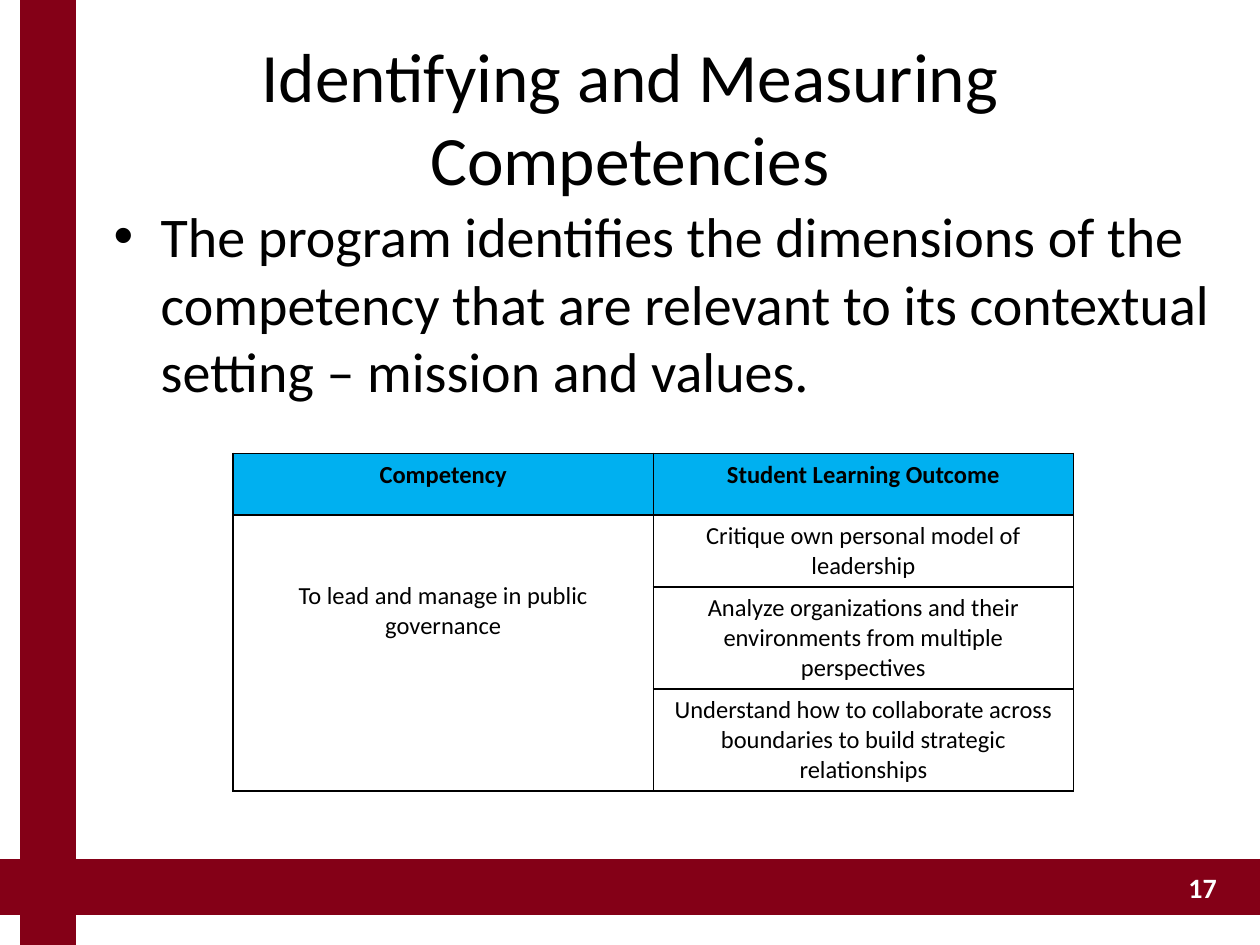
from dataclasses import dataclass

from lxml.etree import SubElement
from pptx import Presentation
from pptx.dml.color import RGBColor
from pptx.enum.shapes import MSO_SHAPE
from pptx.enum.text import MSO_ANCHOR, PP_ALIGN
from pptx.oxml.ns import qn
from pptx.util import Cm, Pt

COLORS = {"band": "840017", "head": "00B0F0", "ink": "000000", "page": "FFFFFF"}
FONT = "Calibri"
INSET = Cm(0.13)


@dataclass
class Box:
    left: float
    top: float
    width: float
    height: float

    def area(self) -> tuple:
        return Cm(self.left), Cm(self.top), Cm(self.width), Cm(self.height)


@dataclass
class Label:
    text: str
    box: Box
    size: float
    align: PP_ALIGN
    anchor: MSO_ANCHOR = MSO_ANCHOR.MIDDLE
    color: str = "ink"
    bold: bool = False
    wrap: bool = True
    bullet: bool = False


@dataclass
class Entry:
    row: int
    col: int
    text: str
    top: float = 0.13


def rgb(name: str) -> RGBColor:
    return RGBColor.from_string(COLORS[name])


def style(par, size: float, align: PP_ALIGN, color: str, bold: bool) -> None:
    par.alignment = align
    for run in par.runs:
        font = run.font
        font.name, font.size, font.bold = FONT, Pt(size), bold
        font.color.rgb = rgb(color)


def draw_band(slide, box: Box) -> None:
    band = slide.shapes.add_shape(MSO_SHAPE.RECTANGLE, *box.area())
    band.shadow.inherit = False
    band.fill.solid()
    band.fill.fore_color.rgb = rgb("band")
    band.line.color.rgb = rgb("band")
    band.line.width = Pt(2)


def draw_label(slide, label: Label) -> None:
    frame = slide.shapes.add_textbox(*label.box.area()).text_frame
    frame.word_wrap = label.wrap
    frame.vertical_anchor = label.anchor
    frame.margin_left = frame.margin_right = INSET
    frame.margin_top = frame.margin_bottom = INSET
    frame.text = label.text
    par = frame.paragraphs[0]
    if label.bullet:
        props = par._p.get_or_add_pPr()
        props.set("marL", str(Cm(0.95)))
        props.set("indent", str(Cm(-0.95)))
        SubElement(props, qn("a:buFont"), typeface="Arial")
        SubElement(props, qn("a:buChar"), char="•")
    style(par, label.size, label.align, label.color, label.bold)


def add_edges(cell) -> None:
    props = cell._tc.get_or_add_tcPr()
    for side in ("lnL", "lnR", "lnT", "lnB"):
        line = SubElement(props, qn(f"a:{side}"), w=str(Pt(1)))
        fill = SubElement(line, qn("a:solidFill"))
        SubElement(fill, qn("a:srgbClr"), val=COLORS["ink"])


def draw_table(slide, box: Box, heights: list[float], entries: list[Entry]) -> None:
    table = slide.shapes.add_table(len(heights), 2, *box.area()).table
    table.first_row = table.horz_banding = False
    for col in table.columns:
        col.width = Cm(box.width / 2)
    for row, height in zip(table.rows, heights):
        row.height = Cm(height)
    for cell in table.iter_cells():
        add_edges(cell)
        cell.fill.background()
    table.cell(1, 0).merge(table.cell(len(heights) - 1, 0))
    for entry in entries:
        cell = table.cell(entry.row, entry.col)
        cell.margin_top = Cm(entry.top)
        cell.text = entry.text
        head = entry.row == 0
        if head:
            cell.fill.solid()
            cell.fill.fore_color.rgb = rgb("head")
        style(cell.text_frame.paragraphs[0], 14, PP_ALIGN.CENTER, "ink", head)


BANDS = [Box(0, 17.35, 25.4, 1.07), Box(0.43, 0, 1.07, 19.05)]

LABELS = [
    Label("Identifying and Measuring Competencies",
          Box(1.27, 0.76, 22.86, 3.18), 39.6, PP_ALIGN.CENTER),
    Label("The program identifies the dimensions of the competency that are "
          "relevant to its contextual setting – mission and values.",
          Box(2.16, 3.94, 22.86, 12.9), 32, PP_ALIGN.LEFT,
          MSO_ANCHOR.TOP, bullet=True),
    Label("17", Box(23.75, 17.42, 0.91, 0.94), 16, PP_ALIGN.RIGHT,
          color="page", bold=True, wrap=False),
]

HEIGHTS = [1.24, 1.45, 2.06, 2.06]
ENTRIES = [
    Entry(0, 0, "Competency"),
    Entry(0, 1, "Student Learning Outcome"),
    Entry(1, 0, "To lead and manage in public governance", top=1.33),
    Entry(1, 1, "Critique own personal model of leadership"),
    Entry(2, 1, "Analyze organizations and their environments from multiple "
                "perspectives"),
    Entry(3, 1, "Understand how to collaborate across boundaries to build "
                "strategic relationships"),
]


def main() -> None:
    deck = Presentation()
    deck.slide_width, deck.slide_height = Cm(25.4), Cm(19.05)
    slide = deck.slides.add_slide(deck.slide_layouts[6])

    # Crossing bands
    for band in BANDS:
        draw_band(slide, band)

    # Title, body and page number
    for label in LABELS:
        draw_label(slide, label)

    # Competency table
    draw_table(slide, Box(4.7, 9.14, 16.94, sum(HEIGHTS)), HEIGHTS, ENTRIES)

    deck.save("out.pptx")


if __name__ == "__main__":
    main()
